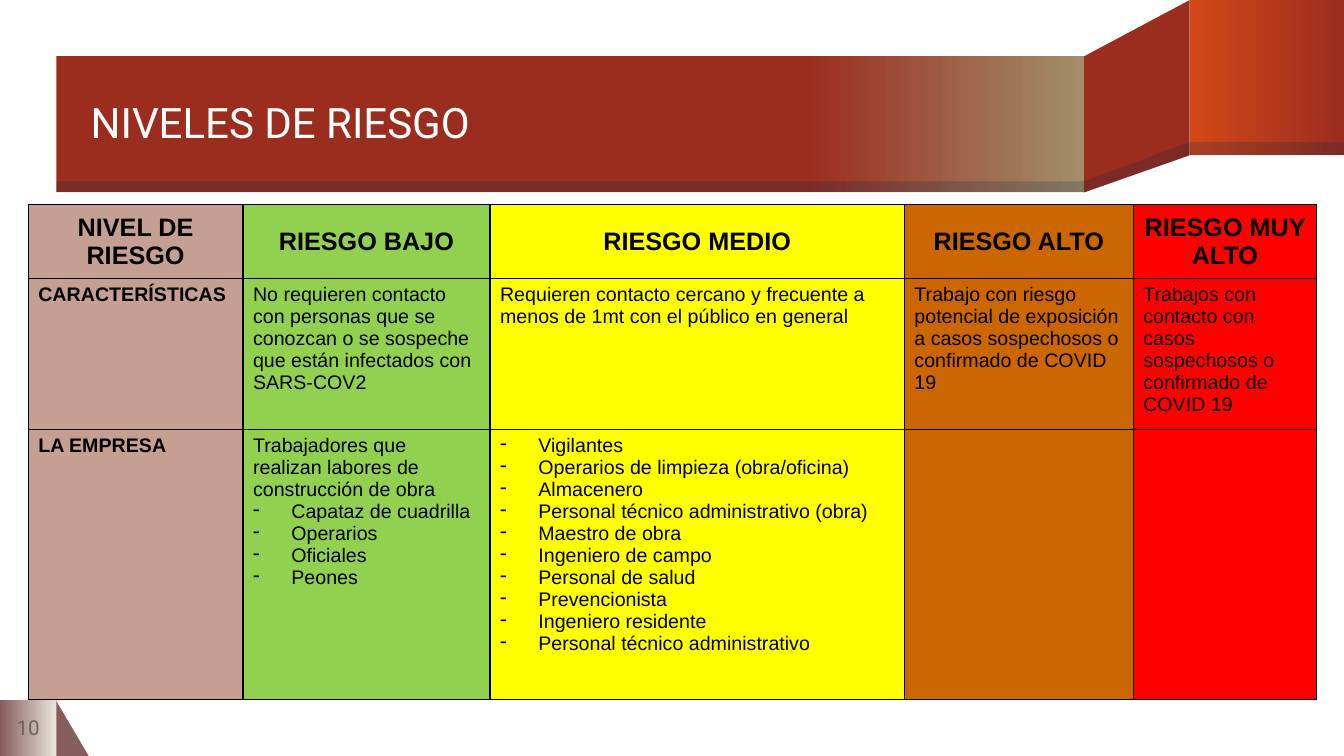
from dataclasses import dataclass

from lxml import etree
from pptx import Presentation
from pptx.dml.color import RGBColor
from pptx.enum.shapes import MSO_SHAPE
from pptx.enum.text import MSO_ANCHOR, PP_ALIGN
from pptx.oxml.ns import qn
from pptx.util import Inches, Pt

RECT = MSO_SHAPE.RECTANGLE
WEDGE = MSO_SHAPE.RIGHT_TRIANGLE
MIDDLE, TOP = MSO_ANCHOR.MIDDLE, MSO_ANCHOR.TOP
LEFT, CENTER = PP_ALIGN.LEFT, PP_ALIGN.CENTER


@dataclass(frozen=True)
class Theme:
    white: str = "FFFFFF"
    black: str = "000000"
    gray: str = "696464"
    brick: str = "9B2D1F"
    orange: str = "D34817"
    khaki: str = "A28E6A"
    mauve: str = "855D5D"
    cream: str = "E9E5DC"
    navy: str = "001F46"
    levels: tuple = ("C49F92", "92D050", "FFFF00", "CC6600", "FF0000")
    title: float = 30
    page: float = 14.7
    head: float = 18
    body: float = 14
    sans: str = "Roboto"
    grid: str = "Arial"


THEME = Theme()

# Table content: a cell is a list of lines, and "- " starts a bullet
COLS = (2.13, 2.45, 4.11, 2.27, 1.82)
ROWS = (0.73, 1.41, 2.68)
HEADS = ("NIVEL DE RIESGO", "RIESGO BAJO", "RIESGO MEDIO", "RIESGO ALTO",
         "RIESGO MUY ALTO")
CELLS = (
    [[head] for head in HEADS],
    [
        ["CARACTERÍSTICAS"],
        ["No requieren contacto con personas que se conozcan o se sospeche "
         "que están infectados con SARS-COV2"],
        ["Requieren contacto cercano y frecuente a menos de 1mt con el "
         "público en general"],
        ["Trabajo con riesgo potencial de exposición a casos sospechosos o "
         "confirmado de COVID 19"],
        ["Trabajos con contacto con casos sospechosos o confirmado de "
         "COVID 19"],
    ],
    [
        ["LA EMPRESA"],
        ["Trabajadores que realizan labores de construcción de obra",
         "- Capataz de cuadrilla", "- Operarios", "- Oficiales", "- Peones"],
        ["- Vigilantes", "- Operarios de limpieza (obra/oficina)",
         "- Almacenero", "- Personal técnico administrativo (obra)",
         "- Maestro de obra", "- Ingeniero de campo", "- Personal de salud",
         "- Prevencionista", "- Ingeniero residente",
         "- Personal técnico administrativo"],
        [],
        [],
    ],
)


def rgb(color):
    return RGBColor.from_string(color)


def node(parent, tag, **attrs):
    return etree.SubElement(parent, qn(tag), attrs)


def paint(shape, color, alpha=None):
    shape.shadow.inherit = False
    shape.line.fill.background()
    shape.fill.solid()
    shape.fill.fore_color.rgb = rgb(color)
    if alpha is not None:
        tint = shape.fill._xPr.find(".//" + qn("a:srgbClr"))
        node(tint, "a:alpha", val=str(alpha * 1000))


def blend(shape, stops):
    """Fill from left to right with (percent, color) stops."""
    paint(shape, stops[0][1])
    shape.fill.gradient()
    shape.fill.gradient_angle = 0
    ramp = shape.fill._xPr.find(".//" + qn("a:gsLst"))
    for old in list(ramp):
        ramp.remove(old)
    for pos, color in stops:
        stop = node(ramp, "a:gs", pos=str(pos * 1000))
        node(stop, "a:srgbClr", val=color)


def block(slide, box, kind=RECT):
    return slide.shapes.add_shape(kind, *map(Inches, box))


def outline(slide, points):
    dots = [(Inches(x), Inches(y)) for x, y in points]
    path = slide.shapes.build_freeform(*dots[0])
    path.add_line_segments(dots[1:], close=True)
    return path.convert_to_shape()


def style(para, font, size, color, bold=False):
    for run in para.runs:
        run.font.name = font
        run.font.size = Pt(size)
        run.font.bold = bold
        run.font.color.rgb = rgb(color)


def label(slide, box, text, size, color, align):
    frame = slide.shapes.add_textbox(*map(Inches, box)).text_frame
    frame.word_wrap = True
    frame.vertical_anchor = MIDDLE
    frame.margin_left = frame.margin_right = 0
    frame.margin_top = frame.margin_bottom = 0
    frame.text = text
    para = frame.paragraphs[0]
    para.alignment = align
    para.line_spacing = 0.9 if align == LEFT else 1.0
    style(para, THEME.sans, size, color)


def bullet(para):
    props = para._p.get_or_add_pPr()
    props.set("marL", str(Inches(0.38)))
    props.set("indent", str(-Inches(0.38)))
    node(props, "a:buChar", char="-")


def border(cell):
    props = cell._tc.get_or_add_tcPr()
    for side in "LRTB":
        line = node(props, "a:ln" + side, w=str(Pt(1)))
        node(node(line, "a:solidFill"), "a:srgbClr", val=THEME.black)


def fill_cell(cell, lines, color, head, bold):
    border(cell)
    cell.fill.solid()
    cell.fill.fore_color.rgb = rgb(color)
    cell.vertical_anchor = MIDDLE if head else TOP
    cell.text_frame.text = "\n".join(line.removeprefix("- ") for line in lines)
    for para, line in zip(cell.text_frame.paragraphs, lines):
        para.alignment = CENTER if head else LEFT
        if line.startswith("- "):
            bullet(para)
        size = THEME.head if head else THEME.body
        style(para, THEME.grid, size, THEME.black, bold)


def risk_table(slide):
    box = map(Inches, (0.28, 2.03, sum(COLS), sum(ROWS)))
    table = slide.shapes.add_table(len(ROWS), len(COLS), *box).table
    for col, width in zip(table.columns, COLS):
        col.width = Inches(width)
    for r, (high, cells) in enumerate(zip(ROWS, CELLS)):
        table.rows[r].height = Inches(high)
        for c, lines in enumerate(cells):
            fill_cell(table.cell(r, c), lines, THEME.levels[c],
                      r == 0, r == 0 or c == 0)


def ribbon(slide):
    fold = outline(slide, [(11.8, 0), (10.75, 0.56), (10.75, 1.91), (11.8, 1.54)])
    paint(fold, THEME.brick)
    blend(block(slide, (11.8, 0, 1.53, 1.54)),
          [(0, THEME.orange), (100, THEME.brick)])
    blend(block(slide, (0.56, 0.56, 10.19, 1.35)),
          [(0, THEME.brick), (73, THEME.brick), (100, THEME.khaki)])
    # Dark lower edge
    edge = [(11.8, 1.41), (10.75, 1.8), (10.75, 1.91), (11.8, 1.54)]
    for shade in (outline(slide, edge),
                  block(slide, (11.8, 1.41, 1.53, 0.13)),
                  block(slide, (0.56, 1.8, 10.19, 0.11))):
        paint(shade, THEME.navy, 20)


def main():
    deck = Presentation()
    deck.slide_width, deck.slide_height = Inches(13.33), Inches(7.5)
    slide = deck.slides.add_slide(deck.slide_layouts[6])

    # Page corner
    corner = (0, 6.94, 0.56, 0.56)
    paint(block(slide, (0.55, 6.94, 0.33, 0.56), WEDGE), THEME.mauve)
    blend(block(slide, corner), [(0, THEME.mauve), (100, THEME.cream)])

    # Title ribbon
    ribbon(slide)
    label(slide, (0.9, 0.57, 9.85, 1.34), "NIVELES DE RIESGO",
          THEME.title, THEME.white, LEFT)
    label(slide, corner, "10", THEME.page, THEME.gray, CENTER)

    # Risk levels
    risk_table(slide)
    deck.save("out.pptx")


if __name__ == "__main__":
    main()
